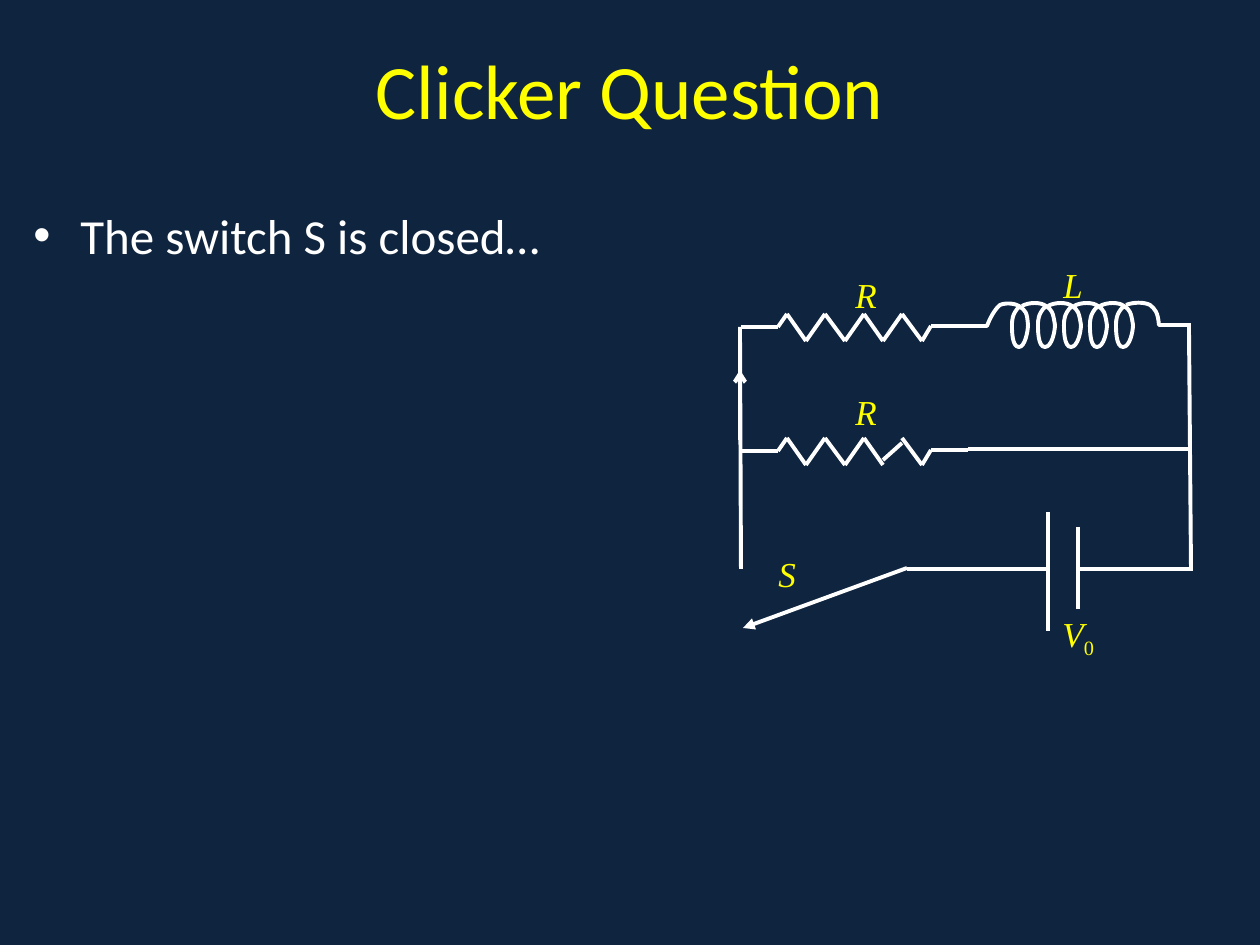
"""Build a clicker-question slide with a two-branch RL circuit."""
from dataclasses import dataclass
from itertools import pairwise
from typing import Any

from lxml import etree
from pptx import Presentation
from pptx import util as u
from pptx.dml.color import RGBColor
from pptx.enum import shapes, text
from pptx.oxml.ns import qn

PX = 914400 / 126
NAVY, YELLOW, WHITE = "0F243E", "FFFF00", "FFFFFF"
SERIF = {"name": "Times New Roman", "size": u.Pt(20), "italic": True}
Point = tuple[int, int]


@dataclass
class Label:
    left: int
    top: int
    width: int
    height: int
    symbol: str
    subscript: str = ""


@dataclass
class Wire:
    start: Point
    end: Point
    head: str = ""


@dataclass
class Resistor:
    top: int
    inset: int = 0


LABELS = [
    Label(843, 267, 57, 53, "R"),
    Label(1051, 257, 57, 53, "L"),
    Label(766, 546, 57, 53, "S"),
    Label(1050, 606, 96, 55, "V", "0"),
    Label(843, 384, 57, 53, "R"),
]
WIRES = [
    Wire((968, 449), (1190, 449)),
    Wire((1078, 569), (1193, 569)),
    Wire((740, 327), (741, 569)),
    Wire((1189, 326), (1191, 569)),
    Wire((743, 628), (907, 568), "triangle"),
    Wire((1078, 527), (1078, 609)),
    Wire((907, 569), (1048, 569)),
    Wire((1048, 512), (1048, 631)),
    Wire((740, 370), (740, 440), "arrow"),
]
RESISTORS = [Resistor(314), Resistor(438, 5)]
ZIGZAG = [(741, 13), (778, 13), (787, 0), (806, 27), (825, 0), (845, 27),
          (864, 0), (883, 27), (902, 0), (922, 27), (931, 12), (968, 12)]
UNEVEN_TOOTH = 7
COIL_START = [(958, 326), (958, 326), (987, 326), (987, 326),
              (990, 318), (995, 309), (1000, 305),
              (1007, 302), (1016, 304), (1019, 306),
              (1026, 311), (1027, 312), (1028, 325),
              (1028, 331), (1025, 347), (1019, 347),
              (1012, 347), (1012, 331), (1012, 325),
              (1012, 321), (1012, 314), (1019, 307)]
COIL_LOOP = [(1022, 306), (1029, 302), (1041, 302), (1046, 306),
             (1052, 310), (1053, 312), (1055, 325),
             (1055, 331), (1052, 347), (1045, 347),
             (1038, 347), (1038, 330), (1038, 325),
             (1038, 321), (1038, 314), (1045, 307)]
COIL_END = [(1126, 305), (1134, 302), (1144, 302), (1150, 305),
            (1155, 309), (1158, 312), (1159, 325),
            (1159, 325), (1191, 325), (1191, 325)]
LOOP_COUNT, LOOP_PITCH = 4, 26


def emu(px: int) -> int:
    """Turn px into EMU."""
    return round(px * PX)


def colour(hex_code: str) -> RGBColor:
    """Turn a hex string into a colour."""
    return RGBColor.from_string(hex_code)


def apply(target: Any, formats: dict[str, Any]) -> None:
    """Set each format value on the target."""
    for key, value in formats.items():
        setattr(target, key, value)


def add_run(paragraph: Any, words: str, hex_code: str, font: dict[str, Any]) -> Any:
    """Add a formatted run."""
    run = paragraph.add_run()
    run.text = words
    apply(run.font, font)
    run.font.color.rgb = colour(hex_code)
    return run


def add_text(slide: Any, box: tuple[int, int, int, int], words: str, hex_code: str,
             font: dict[str, Any]) -> Any:
    """Add a wrapped text box and return its frame."""
    frame = slide.shapes.add_textbox(*map(emu, box)).text_frame
    frame.word_wrap = True
    add_run(frame.paragraphs[0], words, hex_code, font)
    return frame


def add_bullet(paragraph: Any) -> None:
    """Give the paragraph a hanging bullet."""
    properties = paragraph._p.get_or_add_pPr()
    properties.set("marL", str(emu(47)))
    properties.set("indent", str(-emu(47)))
    etree.SubElement(properties, qn("a:buFont"), typeface="Arial")
    etree.SubElement(properties, qn("a:buChar"), char="•")


def draw_label(slide: Any, label: Label) -> None:
    """Draw a circuit symbol with its subscript."""
    box = (label.left, label.top, label.width, label.height)
    frame = add_text(slide, box, label.symbol, YELLOW, SERIF)
    if label.subscript:
        run = add_run(frame.paragraphs[0], label.subscript, YELLOW, SERIF | {"italic": False})
        run.font._element.set("baseline", "-25000")


def draw_wire(parent: Any, wire: Wire) -> None:
    """Draw a straight wire, with an arrowhead at its start if named."""
    line = parent.shapes.add_connector(
        shapes.MSO_CONNECTOR.STRAIGHT, *map(emu, wire.start + wire.end))
    line.line.color.rgb = colour(WHITE)
    line.line.width = u.Pt(2.25)
    if wire.head:
        etree.SubElement(line.line._get_or_add_ln(), qn("a:headEnd"), type=wire.head)
    etree.SubElement(line._element.spPr, qn("a:effectLst"))


def draw_resistor(slide: Any, resistor: Resistor) -> None:
    """Draw a grouped zigzag with its leads."""
    group = slide.shapes.add_group_shape()
    for tooth, ((x1, y1), (x2, y2)) in enumerate(pairwise(ZIGZAG)):
        inset = resistor.inset if tooth == UNEVEN_TOOTH else 0
        draw_wire(group, Wire((x1, resistor.top + y1 - inset),
                              (x2, resistor.top + y2 + inset)))


def draw_curve(group: Any, points: list[Point], shift: int = 0) -> None:
    """Draw a chain of cubic curves, three points to each."""
    (x, y), *rest = [(emu(px + shift), emu(py)) for px, py in points]
    builder = group.shapes.build_freeform(x, y)
    builder.add_line_segments(rest, close=False)
    curve = builder.convert_to_shape()
    curve.shadow.inherit = False
    curve.fill.background()
    curve.line.color.rgb = colour(WHITE)
    curve.line.width = u.Pt(2.25)
    outline = next(curve._element.iter(qn("a:path")))
    segments = outline.findall(qn("a:lnTo"))
    for first in range(0, len(segments), 3):
        cubic = etree.SubElement(outline, qn("a:cubicBezTo"))
        for segment in segments[first:first + 3]:
            cubic.append(segment[0])
            outline.remove(segment)


def draw_coil(slide: Any) -> None:
    """Draw the inductor as one group."""
    group = slide.shapes.add_group_shape()
    draw_curve(group, COIL_START)
    draw_curve(group, COIL_END)
    for loop in range(LOOP_COUNT):
        draw_curve(group, COIL_LOOP, loop * LOOP_PITCH)


def main() -> None:
    """Build and save the slide."""
    deck = Presentation()
    apply(deck, {"slide_width": u.Inches(10), "slide_height": u.Inches(7.5)})
    slide = deck.slides.add_slide(deck.slide_layouts[6])
    slide.background.fill.solid()
    slide.background.fill.fore_color.rgb = colour(NAVY)
    title = add_text(slide, (63, 10, 1134, 158), "Clicker Question", YELLOW,
                     {"name": "Calibri", "size": u.Pt(44)})
    title.vertical_anchor = text.MSO_ANCHOR.MIDDLE
    title.paragraphs[0].alignment = text.PP_ALIGN.CENTER
    prompt = add_text(slide, (21, 199, 651, 693), "The switch S is closed…", WHITE,
                      {"name": "Calibri", "size": u.Pt(28)})
    prompt.paragraphs[0].space_before = u.Pt(5.6)
    add_bullet(prompt.paragraphs[0])
    for resistor in RESISTORS:
        draw_resistor(slide, resistor)
    draw_coil(slide)
    for wire in WIRES:
        draw_wire(slide, wire)
    for label in LABELS:
        draw_label(slide, label)
    deck.save("out.pptx")


if __name__ == "__main__":
    main()
